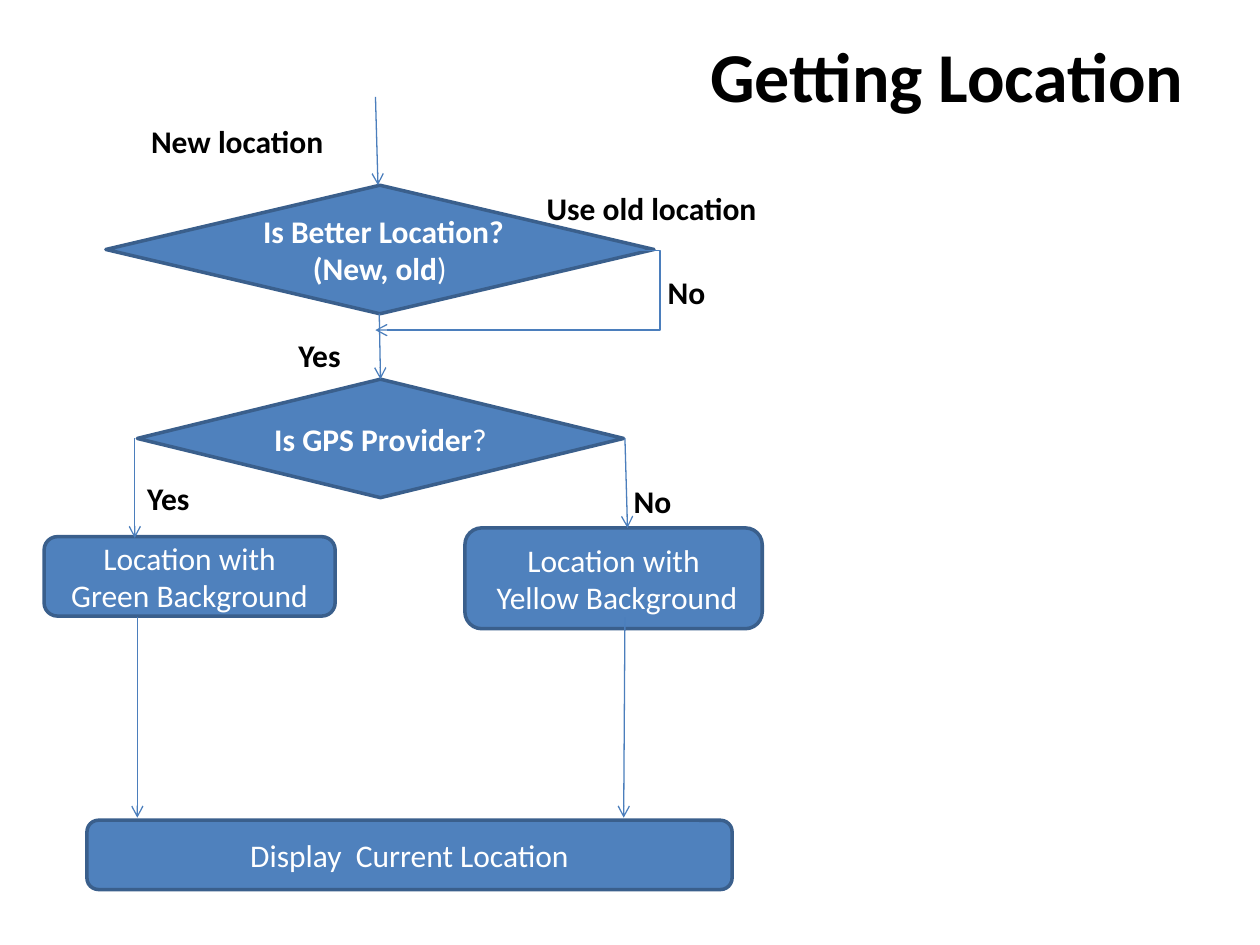
import pptx
import pptx.util
import pptx.dml.color
import pptx.enum.shapes
import pptx.enum.text
import pptx.oxml
import pptx.oxml.ns
import lxml.etree

SHAPE = pptx.enum.shapes.MSO_SHAPE
CONNECTOR = pptx.enum.shapes.MSO_CONNECTOR
ALIGN = pptx.enum.text.PP_ALIGN
ANCHOR = pptx.enum.text.MSO_ANCHOR
AUTO_SIZE = pptx.enum.text.MSO_AUTO_SIZE
BLUE = pptx.dml.color.RGBColor(0x4F, 0x81, 0xBD)
OUTLINE = pptx.dml.color.RGBColor(0x3A, 0x5F, 0x8C)
ARROW = pptx.dml.color.RGBColor(0x4B, 0x7E, 0xBC)
WHITE = pptx.dml.color.RGBColor(0xFF, 0xFF, 0xFF)
BLACK = pptx.dml.color.RGBColor(0, 0, 0)

deck = pptx.Presentation()
deck.slide_width = pptx.util.Inches(10)
deck.slide_height = pptx.util.Inches(7.5)
COLUMNS, ROWS = 100, 75


def grid(*cells):
    """Turn alternating column and row counts into slide lengths."""
    units = (deck.slide_width / COLUMNS, deck.slide_height / ROWS)
    return [round(cell * units[i % 2]) for i, cell in enumerate(cells)]


def style(paragraph, size, color, bold, align):
    paragraph.alignment = align
    paragraph.font.name = "Calibri"
    paragraph.font.size = pptx.util.Pt(size)
    paragraph.font.bold = bold
    paragraph.font.color.rgb = color


slide = deck.slides.add_slide(deck.slide_layouts[5])

title = slide.shapes.title
title.left, title.top, title.width, title.height = grid(53.1, 2.1, 44.1, 7.7)
title.text_frame.text = "Getting Location"
title.text_frame.vertical_anchor = ANCHOR.TOP
title.text_frame.auto_size = AUTO_SIZE.NONE
style(title.text_frame.paragraphs[0], 40, BLACK, True, ALIGN.CENTER)

# Each line of a step is a bold part followed by a regular part.
steps = [
    (SHAPE.DIAMOND, (8.4, 14.7, 43.5, 10.2),
     [(" Is Better Location?", ""), ("(New, old", ")")]),
    (SHAPE.DIAMOND, (10.9, 30.1, 38.6, 9.4), [("Is GPS Provider", "?")]),
    (SHAPE.FLOWCHART_ALTERNATE_PROCESS, (3.5, 42.6, 23.1, 6.3),
     [("", "Location with"), ("", "Green Background")]),
    (SHAPE.FLOWCHART_ALTERNATE_PROCESS, (36.9, 41.9, 23.6, 8),
     [("", "Location with"), ("", " Yellow Background")]),
    (SHAPE.ROUNDED_RECTANGLE, (6.9, 65.1, 51.2, 5.5),
     [("", "Display  Current Location")]),
]
for kind, cells, lines in steps:
    step = slide.shapes.add_shape(kind, *grid(*cells))
    step.shadow.inherit = False
    step.fill.solid()
    step.fill.fore_color.rgb = BLUE
    step.line.color.rgb = OUTLINE
    step.line.width = pptx.util.Pt(2)
    frame = step.text_frame
    frame.vertical_anchor = ANCHOR.MIDDLE
    for number, parts in enumerate(lines):
        paragraph = frame.add_paragraph() if number else frame.paragraphs[0]
        style(paragraph, 18, WHITE, None, ALIGN.CENTER)
        for words, bold in zip(parts, (True, False)):
            if words:
                run = paragraph.add_run()
                run.text = words
                run.font.bold = bold

flows = [
    (CONNECTOR.STRAIGHT, (29.8, 7.7, 30, 14.7)),
    (CONNECTOR.STRAIGHT, (30.1, 24.9, 30.2, 30.1)),
    (CONNECTOR.STRAIGHT, (10.7, 34.8, 10.7, 42.7)),
    (CONNECTOR.STRAIGHT, (49.6, 34.8, 49.8, 41.9)),
    (CONNECTOR.STRAIGHT, (10.9, 49, 10.9, 64.9)),
    (CONNECTOR.STRAIGHT, (49.6, 49, 49.5, 64.9)),
    (CONNECTOR.ELBOW, (50.2, 19.9, 29.8, 26.2)),
]
for kind, cells in flows:
    flow = slide.shapes.add_connector(kind, *grid(*cells))
    flow.line.color.rgb = ARROW
    flow.line.width = pptx.util.Pt(0.75)
    head = lxml.etree.SubElement(flow.line._get_or_add_ln(), pptx.oxml.ns.qn("a:tailEnd"))
    head.set("type", "arrow")
    properties = flow._element.spPr
    lxml.etree.SubElement(properties, pptx.oxml.ns.qn("a:effectLst"))
    if kind == CONNECTOR.ELBOW:
        # A negative bend carries the line out to the right before it turns back.
        bends = properties.find(pptx.oxml.ns.qn("a:prstGeom")).get_or_add_avLst()
        bend = lxml.etree.SubElement(bends, pptx.oxml.ns.qn("a:gd"))
        bend.set("name", "adj1")
        bend.set("fmla", "val -10700")

labels = [
    ("New location", 11, 9.2, 18.1),
    ("Use old location", 42.4, 14.5, 23.6),
    ("No", 52, 21.2, 5.5),
    ("Yes", 22.7, 26.2, 6.3),
    ("Yes", 10.7, 37.5, 7.2),
    ("No", 49.3, 37.8, 5.5),
]
for words, column, row, width in labels:
    label = slide.shapes.add_textbox(*grid(column, row, width, 4))
    label.text_frame.word_wrap = True
    label.text_frame.auto_size = AUTO_SIZE.SHAPE_TO_FIT_TEXT
    label.text_frame.text = words
    style(label.text_frame.paragraphs[0], 18, BLACK, True, ALIGN.LEFT)

deck.save("out.pptx")
